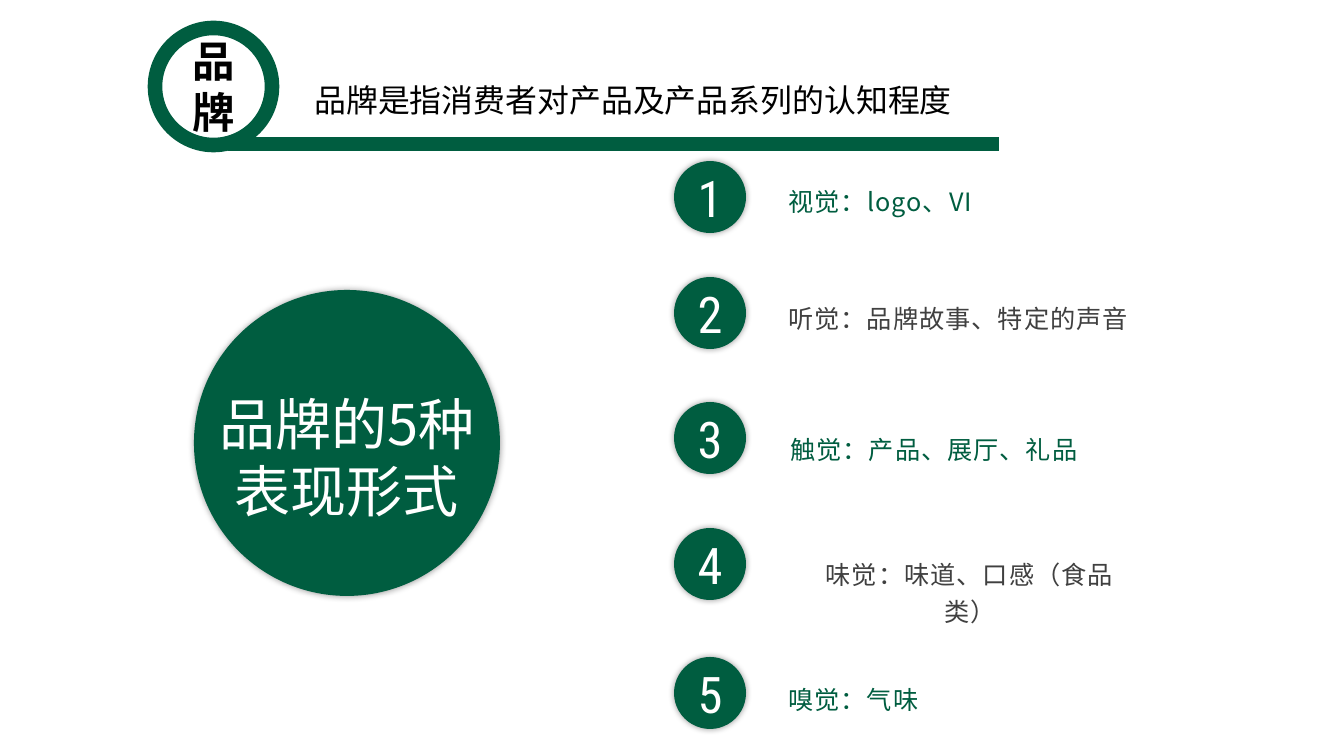
from lxml.etree import SubElement
from pptx import Presentation
from pptx.dml.color import RGBColor
from pptx.enum.shapes import MSO_CONNECTOR, MSO_SHAPE
from pptx.enum.text import MSO_ANCHOR, MSO_AUTO_SIZE, PP_ALIGN
from pptx.oxml.ns import qn
from pptx.util import Pt

PX = 9565
GREEN, GRAY, WHITE, BLACK = "005D40", "404040", "FFFFFF", "000000"
CHINESE, NUMERALS = "Noto Sans CJK SC", "Roboto Condensed"
LEFT, CENTER = PP_ALIGN.LEFT, PP_ALIGN.CENTER

BADGE = "品牌"
HEADING = "品牌是指消费者对产品及产品系列的认知程度"
TOPIC = "品牌的5种表现形式"
# text, circle top, text box (left, top, width, height), alignment
SENSES = [
    ("视觉：logo、VI", 161, (779, 176, 275, 46), LEFT),
    ("听觉：品牌故事、特定的声音", 277, (779, 293, 371, 46), LEFT),
    ("触觉：产品、展厅、礼品", 402, (761, 424, 346, 46), CENTER),
    ("味觉：味道、口感（食品类）", 528, (792, 549, 356, 46), CENTER),
    ("嗅觉：气味", 657, (779, 674, 275, 82), LEFT),
]
CIRCLE_LEFT, CIRCLE_SIZE = 674, 72


def rgb(color):
    return RGBColor.from_string(color)


def emu(*lengths):
    return [length * PX for length in lengths]


def write(shape, text, size, color, font=CHINESE, align=LEFT, bold=False,
          spacing=None, tracking=0, inset=True):
    frame = shape.text_frame
    frame.word_wrap = True
    if not inset:
        frame.margin_left = frame.margin_right = 0
        frame.margin_top = frame.margin_bottom = 0
    para = frame.paragraphs[0]
    para.text = text
    para.alignment = align
    if spacing:
        para.line_spacing = spacing
    para.font.size = Pt(size)
    para.font.bold = bold
    para.font.color.rgb = rgb(color)
    para.font.name = font
    properties = para._p.pPr.find(qn("a:defRPr"))
    SubElement(properties, qn("a:ea"), typeface=CHINESE)
    if tracking:
        properties.set("spc", str(tracking))


def add_text(page, place, text, size, color, **style):
    box = page.shapes.add_textbox(*emu(*place))
    write(box, text, size, color, **style)
    box.text_frame.auto_size = MSO_AUTO_SIZE.SHAPE_TO_FIT_TEXT


def add_circle(page, left, top, size, fill):
    circle = page.shapes.add_shape(MSO_SHAPE.OVAL, *emu(left, top, size, size))
    circle.shadow.inherit = False
    circle.fill.solid()
    circle.fill.fore_color.rgb = rgb(fill)
    circle.line.fill.background()
    circle.text_frame.vertical_anchor = MSO_ANCHOR.MIDDLE
    return circle


def add_glow_shadow(shape):
    """Put a soft, undisplaced shadow around the shape."""
    effects = shape._element.spPr.find(qn("a:effectLst"))
    shadow = SubElement(effects, qn("a:outerShdw"), blurRad=str(Pt(5)),
                        dist="0", dir="0", algn="ctr", rotWithShape="0")
    color = SubElement(shadow, qn("a:srgbClr"), val=BLACK)
    SubElement(color, qn("a:alpha"), val="40000")


def draw_line(line):
    line.color.rgb = rgb(GREEN)
    line.width = Pt(11)


def add_header(page):
    ring = add_circle(page, 155, 28, 117, WHITE)
    draw_line(ring.line)
    write(ring, BADGE, 32, BLACK, font="Arial", align=CENTER, bold=True, inset=False)
    rule = page.shapes.add_connector(MSO_CONNECTOR.STRAIGHT, *emu(228, 144, 999, 144))
    draw_line(rule.line)
    SubElement(rule._element.spPr, qn("a:effectLst"))
    add_text(page, (305, 76, 675, 48), HEADING, 24, BLACK)


def add_topic(page):
    add_glow_shadow(add_circle(page, 194, 290, 306, GREEN))
    add_text(page, (194, 389, 306, 136), TOPIC, 42.2, WHITE, align=CENTER, inset=False)


def add_senses(page):
    for number, (text, top, place, align) in enumerate(SENSES, 1):
        circle = add_circle(page, CIRCLE_LEFT, top, CIRCLE_SIZE, GREEN)
        add_glow_shadow(circle)
        write(circle, str(number), 38, WHITE, font=NUMERALS, align=CENTER)
        add_text(page, place, text, 19, GREEN if number % 2 else GRAY,
                 align=align, spacing=1.2, tracking=80)


def main():
    deck = Presentation()
    deck.slide_width, deck.slide_height = emu(1344, 756)
    page = deck.slides.add_slide(deck.slide_layouts[6])
    add_header(page)
    add_topic(page)
    add_senses(page)
    deck.save("out.pptx")


if __name__ == "__main__":
    main()
